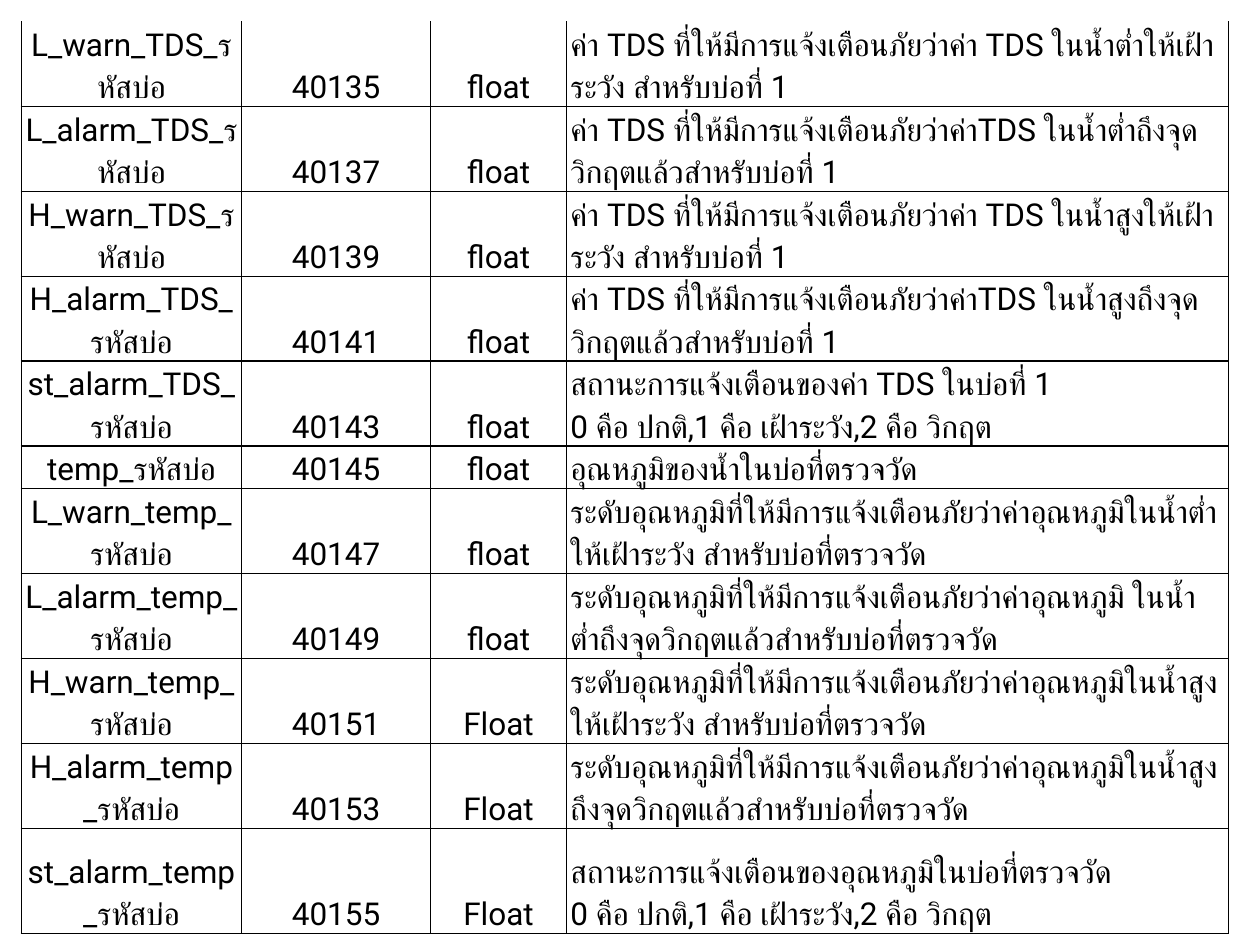
from lxml.etree import SubElement
from pptx import Presentation
from pptx.dml.color import RGBColor
from pptx.enum.text import MSO_ANCHOR as Anchor, PP_ALIGN as Align
from pptx.oxml.ns import qn
from pptx.util import Cm, Pt

COLORS = {"text": "000000", "border": "000000"}
FONT = "Roboto"
COLS = [4.44, 3.81, 2.74, 13.34]
HEIGHTS = [1.68, 1.68, 1.68, 1.68, 1.42, 0.79, 1.65, 1.68, 1.65, 1.68, 2.11]
FIRST_ADDRESS = 40135
LEVELS = "0 คือ ปกติ,1 คือ เฝ้าระวัง,2 คือ วิกฤต"
TDS = "ค่า TDS ที่ให้มีการแจ้งเตือนภัยว่าค่า"
TEMP = "ระดับอุณหภูมิที่ให้มีการแจ้งเตือนภัยว่าค่าอุณหภูมิ"
TDS_WARN = "ให้เฝ้าระวัง สำหรับบ่อที่ 1"
TDS_ALARM = "ถึงจุดวิกฤตแล้วสำหรับบ่อที่ 1"
TEMP_WARN = "ให้เฝ้าระวัง สำหรับบ่อที่ตรวจวัด"
TEMP_ALARM = "ถึงจุดวิกฤตแล้วสำหรับบ่อที่ตรวจวัด"

REGISTERS = [
    ("L_warn_TDS", "float", f"{TDS} TDS ในน้ำต่ำ{TDS_WARN}"),
    ("L_alarm_TDS", "float", f"{TDS}TDS ในน้ำต่ำ{TDS_ALARM}"),
    ("H_warn_TDS", "float", f"{TDS} TDS ในน้ำสูง{TDS_WARN}"),
    ("H_alarm_TDS", "float", f"{TDS}TDS ในน้ำสูง{TDS_ALARM}"),
    ("st_alarm_TDS", "float", f"สถานะการแจ้งเตือนของค่า TDS ในบ่อที่ 1\n{LEVELS}"),
    ("temp", "float", "อุณหภูมิของน้ำในบ่อที่ตรวจวัด"),
    ("L_warn_temp", "float", f"{TEMP}ในน้ำต่ำ{TEMP_WARN}"),
    ("L_alarm_temp", "float", f"{TEMP} ในน้ำต่ำ{TEMP_ALARM}"),
    ("H_warn_temp", "Float", f"{TEMP}ในน้ำสูง{TEMP_WARN}"),
    ("H_alarm_temp", "Float", f"{TEMP}ในน้ำสูง{TEMP_ALARM}"),
    ("st_alarm_temp", "Float", f"สถานะการแจ้งเตือนของอุณหภูมิในบ่อที่ตรวจวัด\n{LEVELS}"),
]


def set_borders(cell, sides, color=COLORS["border"], width=1):
    """Draw the named sides of a cell and hide the others."""
    tc_pr = cell._tc.get_or_add_tcPr()
    for side in "LRTB":
        ln = SubElement(tc_pr, qn(f"a:ln{side}"), w=str(Pt(width)))
        if side in sides:
            fill = SubElement(ln, qn("a:solidFill"))
            SubElement(fill, qn("a:srgbClr"), val=color)
        else:
            SubElement(ln, qn("a:noFill"))


def set_text(cell, text, align=Align.CENTER, size=18, color=COLORS["text"]):
    """Fill a cell with formatted paragraphs, one per line of text."""
    cell.text = text
    cell.vertical_anchor = Anchor.BOTTOM
    cell.margin_left = cell.margin_right = Cm(0.08)
    cell.margin_top = cell.margin_bottom = 0
    for p in cell.text_frame.paragraphs:
        p.alignment = align
        p.line_spacing = 1.15
        for r in p.runs:
            r.font.size = Pt(size)
            r.font.name = FONT
            r.font.color.rgb = RGBColor.from_string(color)
            for script in ("ea", "cs"):
                SubElement(r.font._element, qn(f"a:{script}"), typeface=FONT)


def add_register_table(s, left, top):
    """Add the table of registers with their addresses, types and meanings."""
    shape = s.shapes.add_table(len(REGISTERS), len(COLS), Cm(left), Cm(top),
                               Cm(sum(COLS)), Cm(sum(HEIGHTS)))
    table = shape.table
    table.first_row = table.horz_banding = False
    for col, width in zip(table.columns, COLS):
        col.width = Cm(width)
    for i, (name, kind, meaning) in enumerate(REGISTERS):
        table.rows[i].height = Cm(HEIGHTS[i])
        texts = (f"{name}_รหัสบ่อ", str(FIRST_ADDRESS + 2 * i), kind, meaning)
        for j, text in enumerate(texts):
            cell = table.cell(i, j)
            set_text(cell, text, align=Align.LEFT if j == 3 else Align.CENTER)
            set_borders(cell, "LRTB" if i else "LRB")
            cell.fill.background()


def main():
    """Build the slide and save it."""
    prs = Presentation()
    prs.slide_width, prs.slide_height = Cm(25.4), Cm(19.05)
    s = prs.slides.add_slide(prs.slide_layouts[6])
    add_register_table(s, left=0.43, top=0.43)
    prs.save("out.pptx")


if __name__ == "__main__":
    main()
